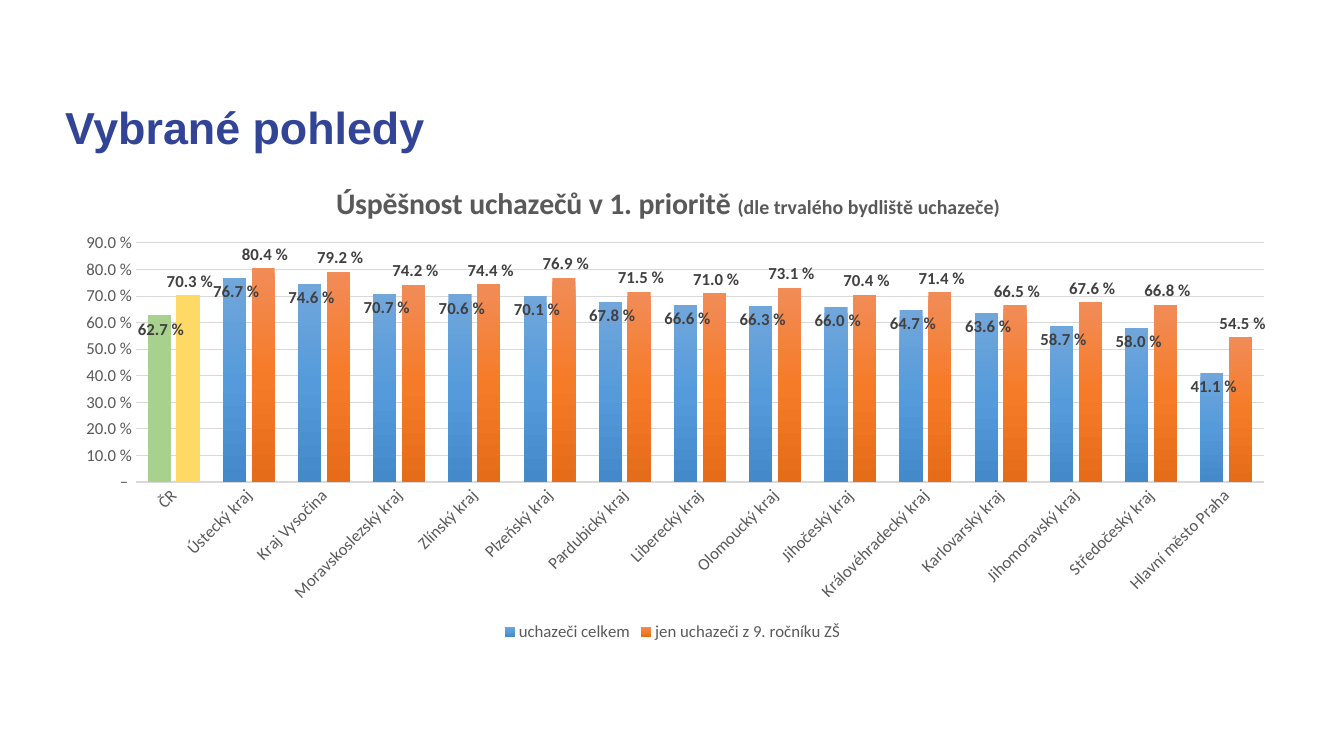
from lxml.etree import SubElement
from pptx import Presentation
from pptx.chart.data import CategoryChartData
from pptx.dml.color import RGBColor
from pptx.enum.chart import XL_CHART_TYPE, XL_LABEL_POSITION, XL_LEGEND_POSITION, XL_TICK_MARK
from pptx.enum.text import MSO_ANCHOR, MSO_AUTO_SIZE, PP_ALIGN
from pptx.oxml import parse_xml
from pptx.oxml.ns import nsdecls, qn
from pptx.util import Emu, Pt

NAVY = RGBColor(0x32, 0x44, 0x96)
GREY = RGBColor(0x59, 0x59, 0x59)
DARK = RGBColor(0x40, 0x40, 0x40)
LIGHT = RGBColor(0xD9, 0xD9, 0xD9)
GREEN = RGBColor(0xA9, 0xD1, 0x8E)
YELLOW = RGBColor(0xFF, 0xD9, 0x66)
BLUES = [RGBColor(0x71, 0xA6, 0xDB), RGBColor(0x55, 0x9B, 0xDB), RGBColor(0x44, 0x8A, 0xCA)]
ORANGES = [RGBColor(0xF1, 0x8C, 0x57), RGBColor(0xF6, 0x7B, 0x28), RGBColor(0xE5, 0x6C, 0x19)]
PERCENT = r'#\ ##0.0" "%;[Red]\-#\ ##0.0" "%;\–\ '
PX = 914400 / 100.8
CHART_X, CHART_Y, CHART_W, CHART_H = 57, 161, 1231, 485


def set_font(font, size, color, bold=False, name="Calibri"):
    for key, value in {"size": Pt(size), "bold": bold, "name": name}.items():
        setattr(font, key, value)
    font.color.rgb = color


def add_layout(parent, left, top, size=None):
    """Place a chart part by slide pixels."""
    old = parent.find(qn("c:layout"))
    if old is not None:
        parent.remove(old)
    layout = parse_xml(f"<c:layout {nsdecls('c')}><c:manualLayout/></c:layout>")
    values = {"xMode": "edge", "yMode": "edge",
              "x": (left - CHART_X) / CHART_W, "y": (top - CHART_Y) / CHART_H}
    if size:
        values = {"layoutTarget": "inner", **values,
                  "w": size[0] / CHART_W, "h": size[1] / CHART_H}
    for tag, value in values.items():
        SubElement(layout[0], qn(f"c:{tag}")).set("val", str(value))
    parent.insert(1 if parent.tag == qn("c:title") else 0, layout)


prs = Presentation()
prs.slide_width, prs.slide_height = Emu(round(1344 * PX)), Emu(round(756 * PX))
s = prs.slides.add_slide(prs.slide_layouts[5])

# Slide title
title = s.shapes.title
for key, value in {"left": 55, "top": 87, "width": 1231, "height": 625}.items():
    setattr(title, key, Emu(round(value * PX)))
tf = title.text_frame
for key, value in {"word_wrap": True, "auto_size": MSO_AUTO_SIZE.NONE,
                   "vertical_anchor": MSO_ANCHOR.TOP,
                   "margin_top": Emu(round(10 * PX))}.items():
    setattr(tf, key, value)
p = tf.paragraphs[0]
for key, value in {"alignment": PP_ALIGN.LEFT, "line_spacing": 1.05, "space_after": Pt(6)}.items():
    setattr(p, key, value)
r = p.add_run()
r.text = "Vybrané pohledy"
set_font(r.font, 32, NAVY, True, "Arial")

# Success rates: all applicants, ninth-grade applicants
rates = [
    ("ČR", 0.627, 0.703),
    ("Ústecký kraj", 0.767, 0.804),
    ("Kraj Vysočina", 0.746, 0.792),
    ("Moravskoslezský kraj", 0.707, 0.742),
    ("Zlínský kraj", 0.706, 0.744),
    ("Plzeňský kraj", 0.701, 0.769),
    ("Pardubický kraj", 0.678, 0.715),
    ("Liberecký kraj", 0.666, 0.71),
    ("Olomoucký kraj", 0.663, 0.731),
    ("Jihočeský kraj", 0.66, 0.704),
    ("Královéhradecký kraj", 0.647, 0.714),
    ("Karlovarský kraj", 0.636, 0.665),
    ("Jihomoravský kraj", 0.587, 0.676),
    ("Středočeský kraj", 0.58, 0.668),
    ("Hlavní město Praha", 0.411, 0.545),
]
regions, everyone, ninth_grade = zip(*rates)
data = CategoryChartData(number_format=PERCENT)
data.categories = regions
data.add_series("uchazeči celkem", everyone)
data.add_series("jen uchazeči z 9. ročníku ZŠ", ninth_grade)
box = [Emu(round(v * PX)) for v in (CHART_X, CHART_Y, CHART_W, CHART_H)]
chart = s.shapes.add_chart(XL_CHART_TYPE.COLUMN_CLUSTERED, *box, data).chart
set_font(chart.font, 12, GREY)

# Chart title
p = chart.chart_title.text_frame.paragraphs[0]
for text, size in [("Úspěšnost uchazečů v 1. prioritě ", 21.3),
                   ("(dle trvalého bydliště uchazeče)", 14.2)]:
    r = p.add_run()
    r.text = text
    set_font(r.font, size, GREY, True)
add_layout(chart._chartSpace.chart.find(qn("c:title")), 333, 181)
add_layout(chart._chartSpace.chart.plotArea, 136, 243, (1128, 239))

# Legend
chart.has_legend = True
chart.legend.position = XL_LEGEND_POSITION.BOTTOM
chart.legend.include_in_layout = False
set_font(chart.legend.font, 12, GREY)

# Axes
cat_axis, val_axis = chart.category_axis, chart.value_axis
for axis in (cat_axis, val_axis):
    axis.major_tick_mark = axis.minor_tick_mark = XL_TICK_MARK.NONE
    set_font(axis.tick_labels.font, 12, GREY)
cat_axis._element.find(qn("c:txPr")).find(qn("a:bodyPr")).set("rot", "-2700000")
val_axis.minimum_scale, val_axis.maximum_scale, val_axis.major_unit = 0, 0.9, 0.1
val_axis.tick_labels.number_format = PERCENT
val_axis.tick_labels.number_format_is_linked = False
val_axis.format.line.fill.background()
for line, width in [(cat_axis.format.line, 1), (val_axis.major_gridlines.format.line, 0.75)]:
    line.color.rgb, line.width = LIGHT, Pt(width)

# Columns and labels
plot = chart.plots[0]
for key, value in {"gap_width": 100, "overlap": -24, "vary_by_categories": False}.items():
    setattr(plot, key, value)
styles = [(BLUES, GREEN, XL_LABEL_POSITION.INSIDE_END),
          (ORANGES, YELLOW, XL_LABEL_POSITION.OUTSIDE_END)]
for series, (colors, country_color, position) in zip(plot.series, styles):
    stops = "".join(f'<a:gs pos="{i * 50000}"><a:srgbClr val="{c}"/></a:gs>'
                    for i, c in enumerate(colors))
    series.format.fill.background()
    sp_pr = series._element.find(qn("c:spPr"))
    sp_pr.replace(sp_pr.find(qn("a:noFill")), parse_xml(
        f"<a:gradFill {nsdecls('a')}><a:gsLst>{stops}</a:gsLst>"
        '<a:lin ang="5400000" scaled="0"/></a:gradFill>'))
    country = series.points[0].format.fill
    country.solid()
    country.fore_color.rgb = country_color
    labels = series.data_labels
    for key, value in {"show_value": True, "position": position, "number_format": PERCENT,
                       "number_format_is_linked": False}.items():
        setattr(labels, key, value)
    set_font(labels.font, 12, DARK, True)

prs.save("out.pptx")
